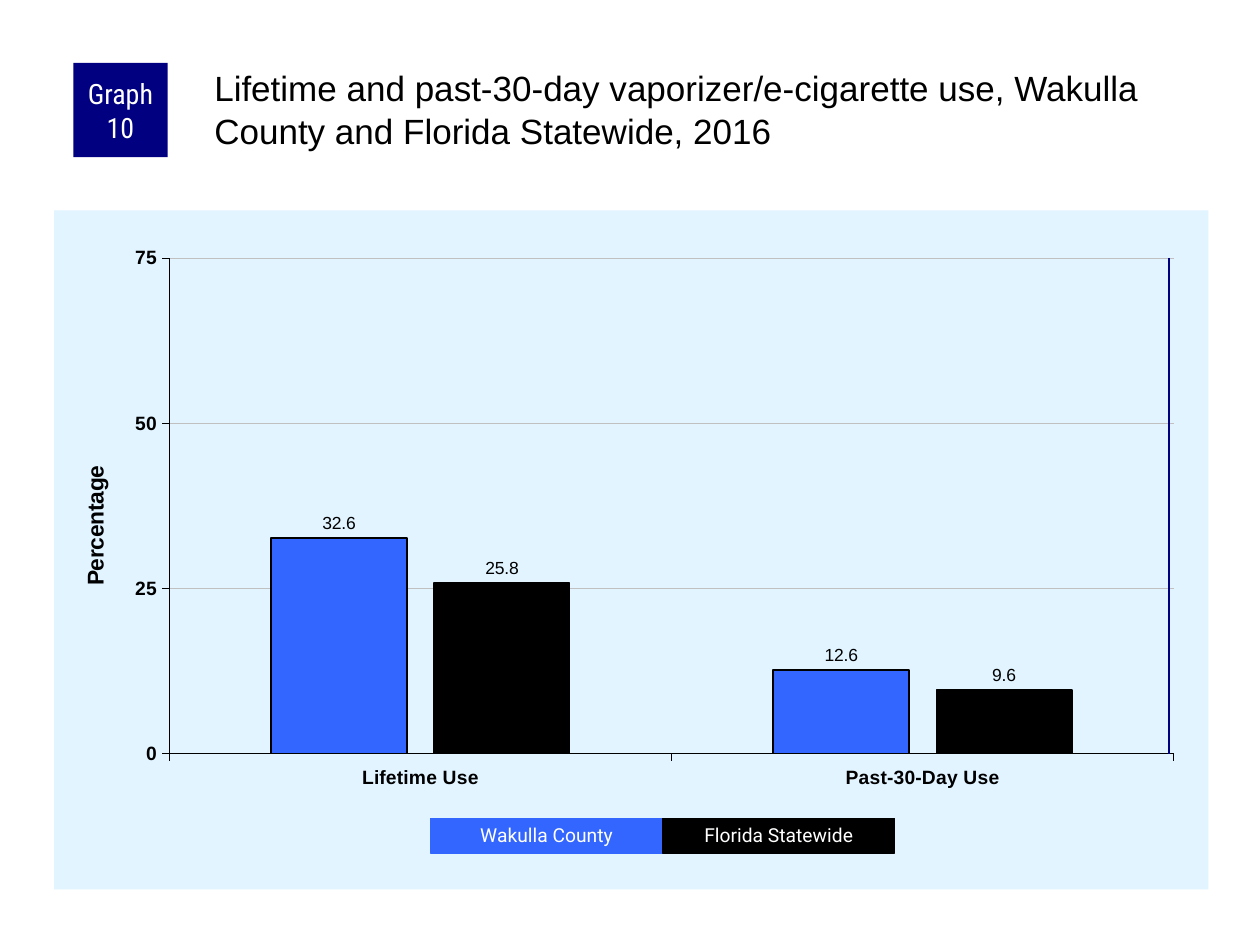
from dataclasses import dataclass

from pptx import Presentation
from pptx.chart.data import CategoryChartData
from pptx.dml.color import RGBColor
from pptx.enum.chart import XL_CHART_TYPE, XL_LABEL_POSITION, XL_TICK_MARK
from pptx.enum.shapes import MSO_CONNECTOR, MSO_SHAPE
from pptx.enum.text import MSO_ANCHOR, MSO_AUTO_SIZE, PP_ALIGN
from pptx.oxml import parse_xml
from pptx.oxml.ns import nsdecls, qn
from pptx.util import Cm, Pt

NAVY, BLUE, BLACK, WHITE = "000080", "3366FF", "000000", "FFFFFF"
PALE_BLUE, GRID_GREY = "E1F4FF", "C0C0C0"
CHART_LEFT, CHART_TOP, CHART_W, CHART_H = 1.09, 4.24, 23.27, 13.69
PLOT_X, PLOT_Y, PLOT_W, PLOT_H = 0.1, 0.07, 0.87, 0.73
KEY_LEFT, KEY_TOP, KEY_W, KEY_H = 8.68, 16.5, 4.68, 0.7


@dataclass
class Series:
    name: str
    values: tuple
    color: str
    outline: float


@dataclass
class Box:
    text: str
    left: float
    top: float
    width: float
    height: float
    color: str
    font: str
    size: float
    spacing: float = 1.0
    outlined: bool = False


SERIES = [
    Series("Wakulla County", (32.6, 12.6), BLUE, 1),
    Series("Florida Statewide", (25.8, 9.6), BLACK, 0.75),
]


def rgb(color: str) -> RGBColor:
    return RGBColor.from_string(color)


def set_font(font, name: str, size: float, color: str, bold: bool = False) -> None:
    for key, value in {"name": name, "size": Pt(size), "bold": bold}.items():
        setattr(font, key, value)
    font.color.rgb = rgb(color)


def set_line(line, color: str, width: float) -> None:
    line.color.rgb = rgb(color)
    line.width = Pt(width)


def set_layout(parent, index: int, inner: bool = False, **places: float) -> None:
    """Fix the position of a chart part as fractions of the chart area."""
    for old in parent.findall(qn("c:layout")):
        parent.remove(old)
    target = '<c:layoutTarget val="inner"/>' if inner else ""
    modes = "".join(f'<c:{k}Mode val="edge"/>' for k in ("x", "y"))
    values = "".join(f'<c:{k} val="{v}"/>' for k, v in places.items())
    parent.insert(index, parse_xml(
        f'<c:layout {nsdecls("c")}><c:manualLayout>{target}{modes}{values}'
        "</c:manualLayout></c:layout>"))


def add_title(s, text: str) -> None:
    title = s.shapes.title
    title.left, title.top, title.width, title.height = (
        Cm(4.24), Cm(1.27), Cm(20.12), Cm(2.1))
    tf = title.text_frame
    frame = {"margin_left": Cm(0.08), "margin_top": Cm(0.08), "margin_right": 0,
             "margin_bottom": 0, "vertical_anchor": MSO_ANCHOR.TOP,
             "word_wrap": True, "auto_size": MSO_AUTO_SIZE.NONE}
    for key, value in frame.items():
        setattr(tf, key, value)
    p = tf.paragraphs[0]
    p.alignment = PP_ALIGN.LEFT
    r = p.add_run()
    r.text = text
    set_font(r.font, "Arial", 20, BLACK)


def add_box(s, box: Box) -> None:
    sp = s.shapes.add_shape(MSO_SHAPE.RECTANGLE, Cm(box.left), Cm(box.top),
                            Cm(box.width), Cm(box.height))
    sp.shadow.inherit = False
    sp.fill.solid()
    sp.fill.fore_color.rgb = rgb(box.color)
    if box.outlined:
        set_line(sp.line, box.color, 0.75)
    else:
        sp.line.fill.background()
    tf = sp.text_frame
    frame = {"margin_left": Cm(0.13), "margin_right": Cm(0.13), "margin_top": 0,
             "margin_bottom": 0, "vertical_anchor": MSO_ANCHOR.MIDDLE,
             "word_wrap": True}
    for key, value in frame.items():
        setattr(tf, key, value)
    p = tf.paragraphs[0]
    p.alignment, p.line_spacing = PP_ALIGN.CENTER, box.spacing
    r = p.add_run()
    r.text = box.text
    set_font(r.font, box.font, box.size, WHITE)


def format_axes(chart) -> None:
    for axis in (chart.category_axis, chart.value_axis):
        axis.major_tick_mark = XL_TICK_MARK.OUTSIDE
        axis.minor_tick_mark = XL_TICK_MARK.NONE
        set_font(axis.tick_labels.font, "Arial", 11, BLACK, bold=True)
        set_line(axis.format.line, BLACK, 0.25)
    axis = chart.value_axis
    scale = {"minimum_scale": 0, "maximum_scale": 75, "major_unit": 25,
             "has_major_gridlines": True}
    for key, value in scale.items():
        setattr(axis, key, value)
    axis.tick_labels.number_format = "0"
    axis.tick_labels.number_format_is_linked = False
    set_line(axis.major_gridlines.format.line, GRID_GREY, 0.25)
    r = axis.axis_title.text_frame.paragraphs[0].add_run()
    r.text = "Percentage"
    set_font(r.font, "Arial", 13, BLACK, bold=True)


def add_use_chart(s) -> None:
    data = CategoryChartData(number_format="0.0")
    data.categories = ["Lifetime Use", "Past-30-Day Use"]
    for item in SERIES:
        data.add_series(item.name, item.values)
    chart = s.shapes.add_chart(
        XL_CHART_TYPE.COLUMN_CLUSTERED, Cm(CHART_LEFT), Cm(CHART_TOP),
        Cm(CHART_W), Cm(CHART_H), data).chart
    chart.has_title = chart.has_legend = False
    set_font(chart.font, "Arial", 11.5, BLACK)
    format_axes(chart)

    plot = chart.plots[0]
    plot.gap_width, plot.overlap, plot.vary_by_categories = 150, -20, False
    for series, item in zip(plot.series, SERIES):
        series.format.fill.solid()
        series.format.fill.fore_color.rgb = rgb(item.color)
        set_line(series.format.line, BLACK, item.outline)
        labels = series.data_labels
        label_format = {"show_value": True, "number_format": "0.0",
                        "number_format_is_linked": False,
                        "position": XL_LABEL_POSITION.OUTSIDE_END}
        for key, value in label_format.items():
            setattr(labels, key, value)
        set_font(labels.font, "Arial", 10, BLACK)

    space = chart._chartSpace
    area = space.find(qn("c:chart")).find(qn("c:plotArea"))
    set_layout(area, 0, inner=True, x=PLOT_X, y=PLOT_Y, w=PLOT_W, h=PLOT_H)
    set_layout(area.find(qn("c:valAx")).find(qn("c:title")), 1, x=0.02, y=0.37)
    space.find(qn("c:chart")).addnext(parse_xml(
        f'<c:spPr {nsdecls("c", "a")}><a:solidFill><a:srgbClr val="{PALE_BLUE}"/>'
        "</a:solidFill><a:ln><a:noFill/></a:ln></c:spPr>"))


def add_plot_edge(s) -> None:
    """Draw the navy line that closes the plot on the right."""
    x = Cm(CHART_LEFT + CHART_W * (PLOT_X + PLOT_W) - 0.1)
    top = CHART_TOP + CHART_H * PLOT_Y
    edge = s.shapes.add_connector(MSO_CONNECTOR.STRAIGHT, x, Cm(top),
                                  x, Cm(top + CHART_H * PLOT_H))
    set_line(edge.line, NAVY, 1)
    edge._element.spPr.append(parse_xml(f'<a:effectLst {nsdecls("a")}/>'))


def main() -> None:
    prs = Presentation()
    prs.slide_width, prs.slide_height = Cm(25.4), Cm(19.05)
    s = prs.slides.add_slide(prs.slide_layouts[5])
    add_use_chart(s)
    add_plot_edge(s)
    add_box(s, Box("Graph 10", 1.48, 1.27, 1.9, 1.9, NAVY, "Roboto Condensed", 16))
    add_title(s, "Lifetime and past-30-day vaporizer/e-cigarette use, "
                 "Wakulla County and Florida Statewide, 2016")
    for i, item in enumerate(SERIES):
        add_box(s, Box(item.name, KEY_LEFT + i * KEY_W, KEY_TOP, KEY_W, KEY_H,
                       item.color, "Roboto", 11, spacing=0.9, outlined=True))
    prs.save("out.pptx")


if __name__ == "__main__":
    main()
